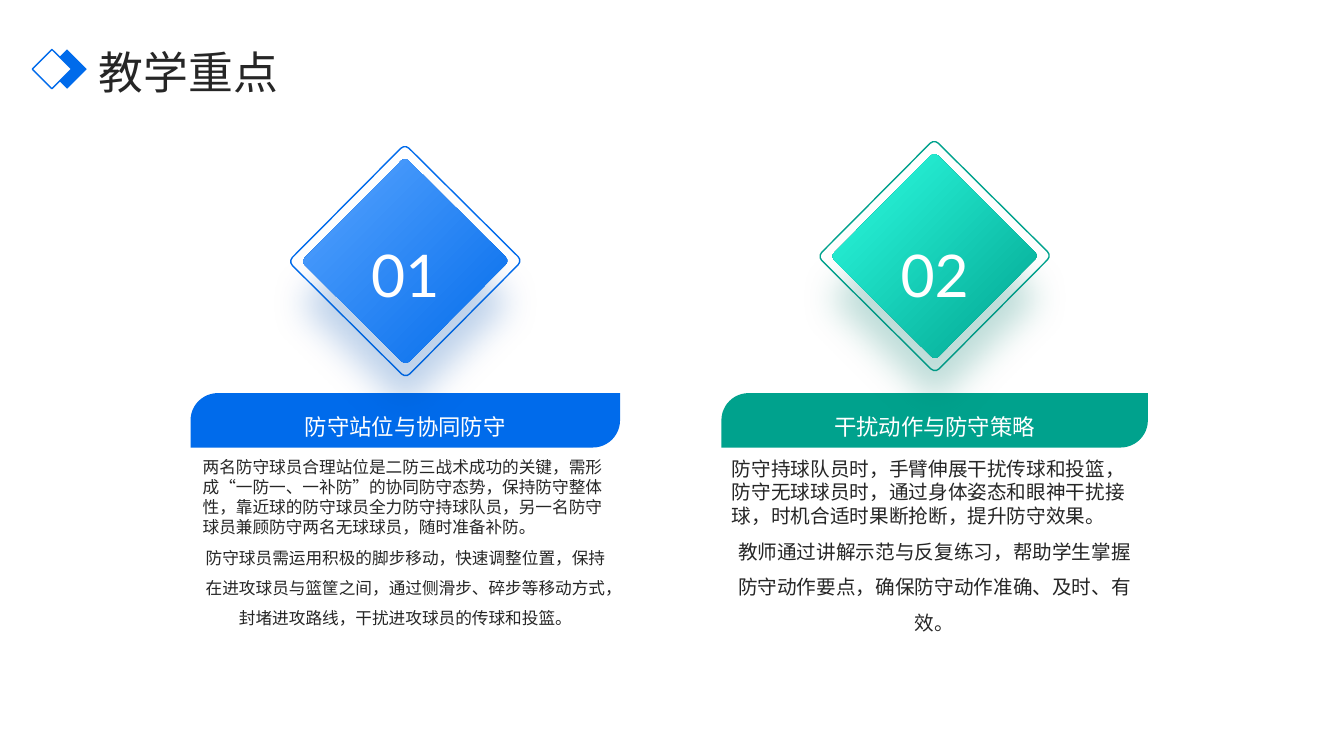
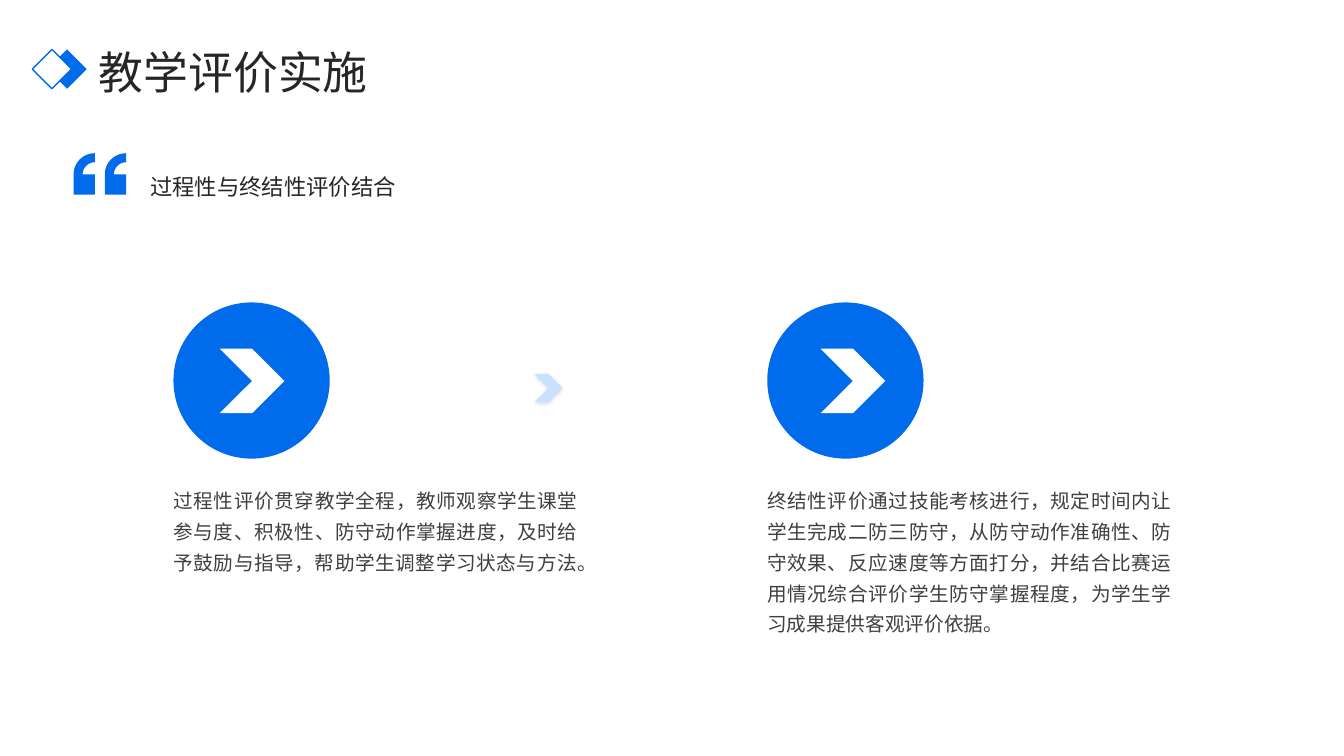
import math
from dataclasses import dataclass
from lxml import etree
from pptx import Presentation, util as u
from pptx.dml.color import RGBColor
from pptx.enum import shapes, text
from pptx.oxml.ns import qn


@dataclass(frozen=True)
class Theme:
    blue: str = "006BEB"
    blue_light: str = "5AA5FF"
    blue_shade: str = "0050B0"
    green: str = "00A28D"
    green_light: str = "2EFFE4"
    green_shade: str = "007A6A"
    pale: str = "C8E1FF"
    white: str = "FFFFFF"
    black: str = "000000"
    ink: str = "262626"
    grey: str = "404040"
    cjk: str = "Noto Sans CJK SC"
    latin: str = "Lato"
    title: float = 32
    number: float = 42
    heading: float = 16
    body: float = 14
    small: float = 11.9
    leading: float = 1.21


T = Theme()
SHAPE, ALIGN, ANCHOR = shapes.MSO_SHAPE, text.PP_ALIGN, text.MSO_ANCHOR

FOCUS = {
    "title": "教学重点",
    "cards": [
        {"number": "01", "heading": "防守站位与协同防守", "center": (4.02, 2.59), "bar": 4.26,
         "colours": (T.blue, T.blue_light, T.blue_shade), "size": T.small,
         "body": ["两名防守球员合理站位是二防三战术成功的关键，需形成“一防一、一补防”的协同防守态势，保持防守整体性，靠近球的防守球员全力防守持球队员，另一名防守球员兼顾防守两名无球球员，随时准备补防。",
                  "防守球员需运用积极的脚步移动，快速调整位置，保持在进攻球员与篮筐之间，通过侧滑步、碎步等移动方式，封堵进攻路线，干扰进攻球员的传球和投篮。"]},
        {"number": "02", "heading": "干扰动作与防守策略", "center": (9.27, 2.54), "bar": 4.23,
         "colours": (T.green, T.green_light, T.green_shade), "size": T.body,
         "body": ["防守持球队员时，手臂伸展干扰传球和投篮，防守无球球员时，通过身体姿态和眼神干扰接球，时机合适时果断抢断，提升防守效果。",
                  "教师通过讲解示范与反复练习，帮助学生掌握防守动作要点，确保防守动作准确、及时、有效。"]},
    ],
}
REVIEW = {
    "title": "教学评价实施",
    "heading": "过程性与终结性评价结合",
    "columns": [
        (1.72, 0.46, "过程性评价贯穿教学全程，教师观察学生课堂参与度、积极性、防守动作掌握进度，及时给予鼓励与指导，帮助学生调整学习状态与方法。"),
        (7.61, 0.53, "终结性评价通过技能考核进行，规定时间内让学生完成二防三防守，从防守动作准确性、防守效果、反应速度等方面打分，并结合比赛运用情况综合评价学生防守掌握程度，为学生学习成果提供客观评价依据。"),
    ],
}


def place(box):
    return [u.Inches(length) for length in box]


def centred(x, y, width, height):
    return x - width / 2, y - height / 2, width, height


def paint(shape, fill=None, line=None):
    shape.shadow.inherit = False
    if fill:
        shape.fill.solid()
        shape.fill.fore_color.rgb = RGBColor.from_string(fill)
    else:
        shape.fill.background()
    if line:
        shape.line.color.rgb = RGBColor.from_string(line)
        shape.line.width = u.Pt(1)
    else:
        shape.line.fill.background()
    return shape


def add_figure(page, kind, box, fill=None, line=None):
    return paint(page.shapes.add_shape(kind, *place(box)), fill, line)


def add_shadow(shape, colour, alpha, blur, distance):
    effects = shape._element.spPr.find(qn("a:effectLst"))
    shadow = etree.SubElement(effects, qn("a:outerShdw"), blurRad=str(u.Pt(blur)),
                              dist=str(u.Pt(distance)), dir="5400000", algn="t", rotWithShape="0")
    tint = etree.SubElement(shadow, qn("a:srgbClr"), val=colour)
    etree.SubElement(tint, qn("a:alpha"), val=str(alpha * 1000))


def set_frame(box, anchor=ANCHOR.TOP, inset=0):
    frame = box.text_frame
    frame.word_wrap = True
    frame.auto_size = text.MSO_AUTO_SIZE.NONE
    frame.vertical_anchor = anchor
    frame.margin_left = frame.margin_right = 0
    frame.margin_top = frame.margin_bottom = u.Inches(inset)
    return frame


def write(para, words, size, colour, spacing, align=ALIGN.LEFT, font=T.cjk):
    para.alignment = align
    para.space_before = para.space_after = u.Pt(0)
    if font == T.cjk:
        para.line_spacing = u.Pt(round(size * T.leading * spacing, 1))
    else:
        para.line_spacing = spacing
    span = para.add_run()
    span.text = words
    span.font.size = u.Pt(size)
    span.font.name = font
    span.font.color.rgb = RGBColor.from_string(colour)
    east = etree.SubElement(span.font._element, qn("a:ea"))
    east.set("typeface", font)


def add_text(page, box, words, size, colour, spacing=1.5, align=ALIGN.CENTER,
             anchor=ANCHOR.MIDDLE, font=T.cjk, inset=0):
    frame = set_frame(page.shapes.add_textbox(*place(box)), anchor, inset)
    write(frame.paragraphs[0], words, size, colour, spacing, align, font)
    return frame


def add_page(deck, title):
    page = deck.slides.add_slide(deck.slide_layouts[5])
    heading = page.shapes.title
    heading.left, heading.top, heading.width, heading.height = place((0.98, 0.43, 11.61, 0.51))
    write(set_frame(heading, ANCHOR.MIDDLE).paragraphs[0], title, T.title, T.ink, 1.1)
    for left, fill, line in ((0.47, T.blue, None), (0.32, T.white, T.blue)):
        add_figure(page, SHAPE.DIAMOND, (left, 0.49, 0.39, 0.39), fill, line)
    return page


def add_tile(page, center, side, colours=None, line=None):
    tile = add_figure(page, SHAPE.ROUNDED_RECTANGLE, centred(*center, side, side), line=line)
    tile.adjustments[0] = 0.035
    tile.rotation = 314.8
    if colours:
        dark, light, shade = colours
        tile.fill.gradient()
        tile.fill.gradient_angle = 90
        for stop, position, colour in zip(tile.fill.gradient_stops, (0, 1), (dark, light)):
            stop.position = position
            stop.color.rgb = RGBColor.from_string(colour)
        add_shadow(tile, shade, 25, 26, 30)


def add_card(page, card):
    x = card["center"][0]
    main = card["colours"][0]
    add_tile(page, card["center"], 1.64, line=main)
    bar = add_figure(page, SHAPE.ROUND_2_DIAG_RECTANGLE, centred(x, 4.17, card["bar"], 0.54), main)
    bar.adjustments[0], bar.adjustments[1] = 0.5, 0
    add_tile(page, card["center"], 1.46, card["colours"])
    add_text(page, centred(x, 2.54, 1.02, 1.01), card["number"], T.number, T.white, font=T.latin)
    add_text(page, centred(x, 4.16, 4, 0.38), card["heading"], T.heading, T.white)
    lead, detail = card["body"]
    frame = add_text(page, (x - 2.01, 4.53, 4.02, 1.77), lead, card["size"], T.ink,
                     1, ALIGN.LEFT, ANCHOR.TOP)
    write(frame.add_paragraph(), detail, card["size"], T.ink, 1.5, ALIGN.CENTER)


def quarter(left, top, centre, radius, steps=16):
    angles = [math.pi / 2 * step / steps for step in range(steps + 1)]
    return [(left + centre - radius * math.cos(a), top + centre - radius * math.sin(a)) for a in angles]


def add_quote_mark(page, left, top, width=0.21, height=0.41, gap=0.1):
    outlines = []
    for x in (left, left + width + gap):
        outer = quarter(x, top, width, width)
        inner = quarter(x, top, width, 0.12)[::-1]
        corners = [(x + width, top + width), (x + width, top + height), (x, top + height)]
        outlines.append([place(point) for point in outer + inner + corners])
    builder = page.shapes.build_freeform(*outlines[0][0])
    for index, points in enumerate(outlines):
        if index:
            builder.move_to(*points[0])
        builder.add_line_segments(points[1:], close=True)
    paint(builder.convert_to_shape(), T.blue)


def build_focus(deck):
    page = add_page(deck, FOCUS["title"])
    for card in FOCUS["cards"]:
        add_card(page, card)


def build_review(deck):
    page = add_page(deck, REVIEW["title"])
    add_quote_mark(page, 0.73, 1.52)
    add_text(page, (1.49, 1.58, 10.77, 1.35), REVIEW["heading"], T.heading, T.ink,
             align=ALIGN.LEFT, anchor=ANCHOR.TOP)
    for left, offset, words in REVIEW["columns"]:
        add_figure(page, SHAPE.OVAL, (left, 3, 1.55, 1.55), T.blue)
        add_figure(page, SHAPE.CHEVRON, (left + offset, 3.46, 0.64, 0.64), T.white)
        add_text(page, (left, 4.74, 4.01, 1.76), words, T.body, T.grey, 1.3,
                 ALIGN.JUSTIFY, ANCHOR.TOP, inset=0.04)
    arrow = add_figure(page, SHAPE.CHEVRON, (5.3, 3.71, 0.28, 0.28), T.pale)
    add_shadow(arrow, T.black, 15, 3, 1)


def main():
    deck = Presentation()
    deck.slide_width, deck.slide_height = u.Inches(13.33), u.Inches(7.5)
    build_focus(deck)
    build_review(deck)
    deck.save("out.pptx")


if __name__ == "__main__":
    main()
